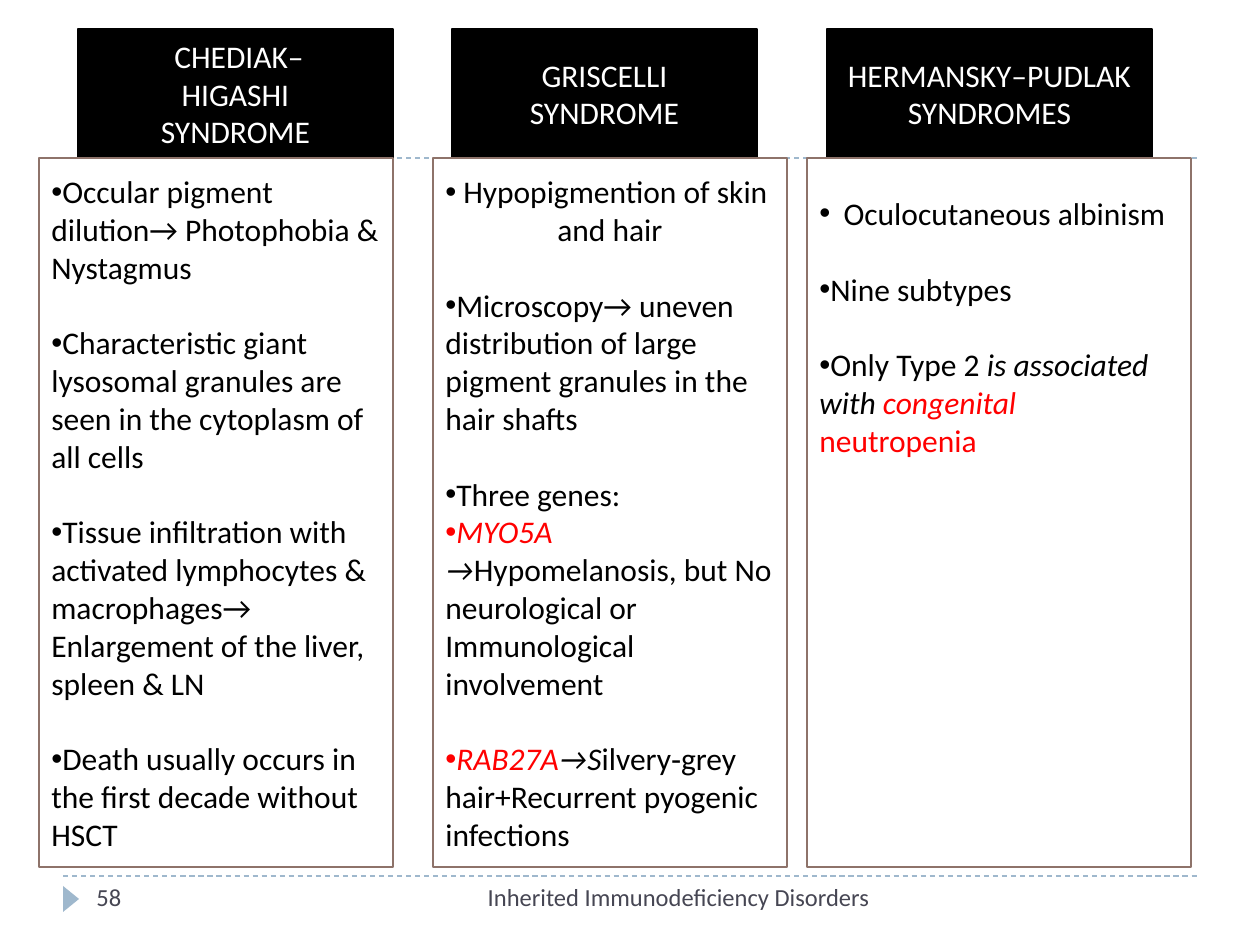
"""Build a slide comparing three immunodeficiency syndromes in columns."""
from lxml import etree
from pptx import Presentation
from pptx import util as u
from pptx.dml.color import RGBColor
from pptx.enum import dml, shapes, text
from pptx.oxml.ns import qn

COLORS = {"black": "000000", "white": "FFFFFF", "red": "FF0000",
          "border": "8E736A", "accent": "9FB8CD", "footer": "464653"}
GAP = u.Pt(21.6)


def px(value):
    return u.Emu(round(value * 914400 / 126))


def add_run(paragraph, words, color, size=18, italic=False):
    run = paragraph.add_run()
    run.text = words
    run.font.name = "Calibri"
    run.font.size = u.Pt(size)
    run.font.italic = italic
    run.font.color.rgb = RGBColor.from_string(COLORS[color])


LEFT, CENTER, RIGHT = text.PP_ALIGN.LEFT, text.PP_ALIGN.CENTER, text.PP_ALIGN.RIGHT
MIDDLE, TOP = text.MSO_ANCHOR.MIDDLE, text.MSO_ANCHOR.TOP

# Each paragraph: alignment, gap before, runs of (words, color, italic)
chediak = [
    (LEFT, False, [("Occular pigment dilution→ Photophobia & Nystagmus", "black", False)]),
    (LEFT, True, [("Characteristic giant lysosomal granules are seen in the cytoplasm of all cells",
                   "black", False)]),
    (LEFT, True, [("Tissue infiltration with activated lymphocytes & macrophages→ "
                   "Enlargement of the liver, spleen & LN", "black", False)]),
    (LEFT, True, [("Death usually occurs in the first decade without HSCT", "black", False)]),
]
griscelli = [
    (CENTER, False, [("Hypopigmention of skin and hair", "black", False)]),
    (LEFT, True, [("Microscopy→ uneven distribution of large pigment granules in the hair shafts",
                   "black", False)]),
    (LEFT, True, [("Three genes:", "black", False)]),
    (LEFT, False, [("MYO5A ", "red", True), ("→", "black", True),
                   ("Hypomelanosis, but No neurological or Immunological involvement",
                    "black", False)]),
    (LEFT, True, [("RAB27A", "red", True), ("→S", "black", True),
                  ("ilvery‐grey hair+Recurrent pyogenic infections", "black", False)]),
]
hermansky = [
    (CENTER, False, [("Oculocutaneous albinism", "black", False)]),
    (LEFT, True, [("Nine subtypes", "black", False)]),
    (LEFT, True, [("Only Type 2 ", "black", False), ("is associated with ", "black", True),
                  ("congenital ", "red", True), ("neutropenia", "red", False)]),
]
# Header left, width, lines; body left, width, anchor, top inset, paragraphs
columns = [
    (78, 315, [" CHEDIAK–", "HIGASHI", "SYNDROME"], 39, 354, MIDDLE, 6, chediak),
    (452, 305, ["GRISCELLI SYNDROME"], 433, 354, MIDDLE, 6, griscelli),
    (827, 325, ["HERMANSKY–PUDLAK SYNDROMES"], 807, 384, TOP, 36, hermansky),
]

presentation = Presentation()
presentation.slide_width, presentation.slide_height = px(1260), px(945)
slide = presentation.slides.add_slide(presentation.slide_layouts[6])

for y in (876, 158):
    rule = slide.shapes.add_connector(shapes.MSO_CONNECTOR.STRAIGHT, px(63), px(y), px(1197), px(y))
    rule.line.color.rgb = RGBColor.from_string(COLORS["accent"])
    rule.line.width = u.Pt(0.75)
    rule.line.dash_style = dml.MSO_LINE.DASH
    etree.SubElement(rule._element.spPr, qn("a:effectLst"))

marker = slide.shapes.add_shape(shapes.MSO_SHAPE.ISOSCELES_TRIANGLE, px(58), px(891), px(26), px(16))
marker.rotation = 90
marker.shadow.inherit = False
marker.fill.solid()
marker.fill.fore_color.rgb = RGBColor.from_string(COLORS["accent"])
marker.line.fill.background()

for left, width, words, alignment in (
        (399, 483, "Inherited Immunodeficiency Disorders", RIGHT), (84, 273, "58", LEFT)):
    footer = slide.shapes.add_textbox(px(left), px(876), px(width), px(50))
    footer.text_frame.word_wrap = True
    paragraph = footer.text_frame.paragraphs[0]
    paragraph.alignment = alignment
    add_run(paragraph, words, "footer", size=14)

for header_left, header_width, lines, body_left, body_width, anchor, inset, points in columns:
    header = slide.shapes.add_shape(
        shapes.MSO_SHAPE.RECTANGLE, px(header_left), px(29), px(header_width), px(129))
    body = slide.shapes.add_shape(
        shapes.MSO_SHAPE.RECTANGLE, px(body_left), px(158), px(body_width), px(709))
    for shape, fill, line in ((header, "black", "black"), (body, "white", "border")):
        shape.shadow.inherit = False
        shape.fill.solid()
        shape.fill.fore_color.rgb = RGBColor.from_string(COLORS[fill])
        shape.line.color.rgb = RGBColor.from_string(COLORS[line])
        shape.line.width = u.Pt(1.5)
        shape.text_frame.word_wrap = True
        shape.text_frame.vertical_anchor = MIDDLE
    body.text_frame.vertical_anchor = anchor
    body.text_frame.margin_top = px(inset)

    for index, words in enumerate(lines):
        frame = header.text_frame
        paragraph = frame.add_paragraph() if index else frame.paragraphs[0]
        paragraph.alignment = CENTER
        add_run(paragraph, words, "white")

    for index, (alignment, gap, runs) in enumerate(points):
        frame = body.text_frame
        paragraph = frame.add_paragraph() if index else frame.paragraphs[0]
        paragraph.alignment = alignment
        if gap:
            paragraph.space_before = GAP
        properties = paragraph._p.get_or_add_pPr()
        etree.SubElement(properties, qn("a:buFont"), typeface="Arial")
        etree.SubElement(properties, qn("a:buChar"), char="•")
        for words, color, italic in runs:
            add_run(paragraph, words, color, italic=italic)

presentation.save("out.pptx")
